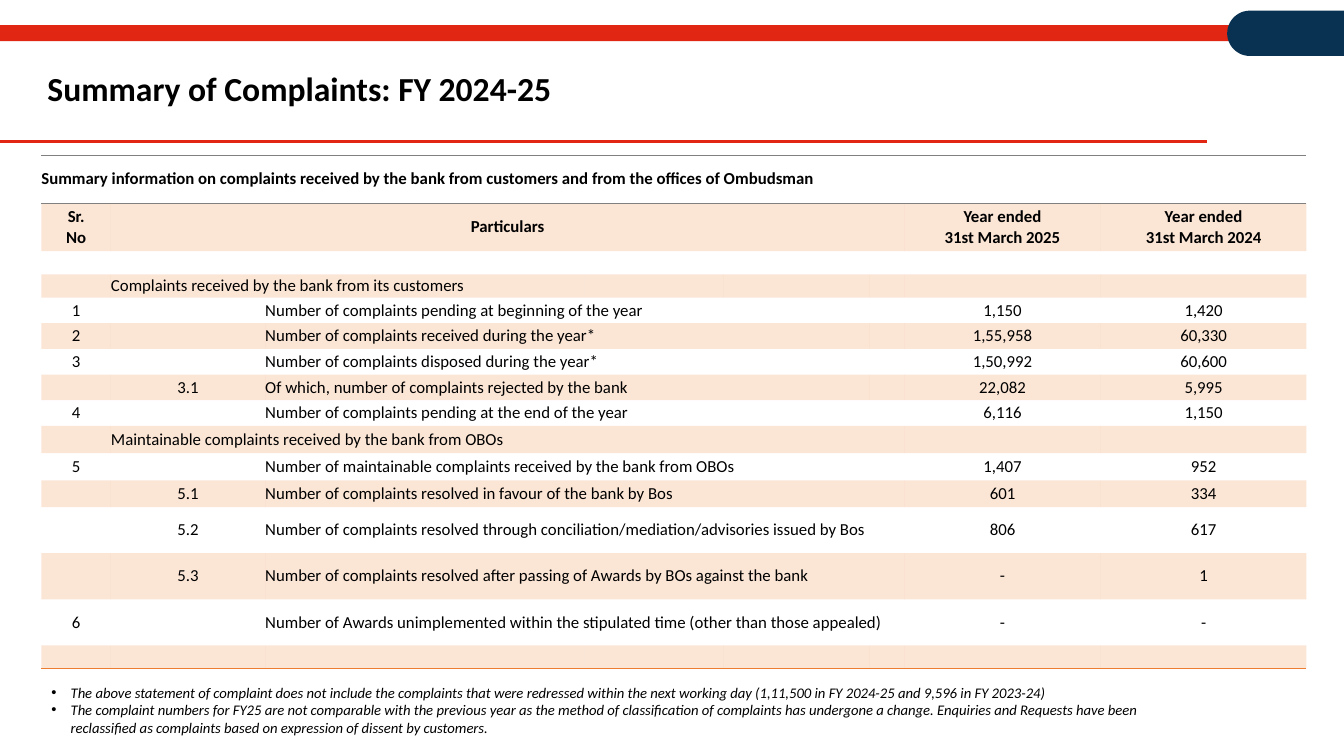
"""Build the complaints summary slide with its table and footnotes."""
from lxml import etree
from pptx import Presentation, util as u
from pptx.dml import color
from pptx.enum import shapes, text
from pptx.oxml import ns

COLOURS = {"red": "E12713", "navy": "093252", "orange": "ED7D31",
           "grey": "808080", "black": "000000"}
COLUMN_SHARES = [5.18, 11.48, 9.22, 14.55, 10.35, 10.88, 2.55, 14.63, 15.3]
LAST_COLUMN = len(COLUMN_SHARES) - 1

TITLE_ROW = (6.35, [(0, 9, "Summary information on complaints received by the bank "
                           "from customers and from the offices of Ombudsman")])
HEADER_ROW = (6.35, [(0, 1, "Sr.\nNo"), (1, 6, "Particulars"),
                     (7, 1, "Year ended\n31st March 2025"),
                     (8, 1, "Year ended\n31st March 2024")])


def section(height, label, span):
    """Return a row that holds only a section label."""
    return height, [(1, span, label)]


def entry(height, number, label, span, *values):
    """Return a numbered row with its label and two yearly values."""
    number_column = 1 if "." in number else 0
    return height, [(number_column, 1, number), (2, span, label),
                    (7, 1, values[0]), (8, 1, values[1])]


ROWS = [
    TITLE_ROW,
    HEADER_ROW,
    section(3.07, "", 2),
    section(3.07, "Complaints received by the bank from its customers", 3),
    entry(3.4, "1", "Number of complaints pending at beginning of the year", 4, "1,150", "1,420"),
    entry(3.4, "2", "Number of complaints received during the year*", 4, "1,55,958", "60,330"),
    entry(3.4, "3", "Number of complaints disposed during the year*", 4, "1,50,992", "60,600"),
    entry(3.4, "3.1", "Of which, number of complaints rejected by the bank", 4, "22,082", "5,995"),
    entry(3.4, "4", "Number of complaints pending at the end of the year", 4, "6,116", "1,150"),
    section(3.6, "Maintainable complaints received by the bank from OBOs", 6),
    entry(3.6, "5", "Number of maintainable complaints received by the bank from OBOs", 5,
          "1,407", "952"),
    entry(3.55, "5.1", "Number of complaints resolved in favour of the bank by Bos", 5,
          "601", "334"),
    entry(6.1, "5.2", "Number of complaints resolved through "
          "conciliation/mediation/advisories issued by Bos", 5, "806", "617"),
    entry(6.1, "5.3", "Number of complaints resolved after passing of Awards by BOs "
          "against the bank", 5, "-", "1"),
    entry(6.1, "6", "Number of Awards unimplemented within the stipulated time "
          "(other than those appealed)", 5, "-", "-"),
    (3.07, [(2, 2, "")]),
]
NOTES = [
    "The above statement of complaint does not include the complaints that were redressed "
    "within the next working day (1,11,500 in FY 2024-25 and 9,596 in FY 2023-24)",
    "The complaint numbers for FY25 are not comparable with the previous year as the method "
    "of classification of complaints has undergone a change. Enquiries and Requests have been "
    "reclassified as complaints based on expression of dissent by customers.",
]


def rgb(name):
    """Return a named colour as an RGB value."""
    return color.RGBColor.from_string(COLOURS[name])


def write(paragraph, words, size=12, bold=False, italic=False, align=text.PP_ALIGN.LEFT):
    """Write formatted words into a paragraph, one line per newline."""
    paragraph.alignment = align
    paragraph.space_before = u.Pt(0)
    for position, line in enumerate(words.split("\n") if words else []):
        if position:
            paragraph.add_line_break()
        run = paragraph.add_run()
        run.text = line
        font = run.font
        font.name, font.size, font.bold, font.italic = "Calibri", u.Pt(size), bold, italic
        font.color.rgb = rgb("black")
    etree.SubElement(paragraph._p, ns.qn("a:endParaRPr"), sz=str(int(size * 100)))


class ComplaintsSlide:
    """Hold the slide and place its elements by percentages of its size."""

    def __init__(self, presentation):
        self.width, self.height = presentation.slide_width, presentation.slide_height
        self.slide = presentation.slides.add_slide(presentation.slide_layouts[1])

    def across(self, share):
        """Return a percentage of the slide's width."""
        return u.Emu(round(self.width * share / 100))

    def down(self, share):
        """Return a percentage of the slide's height."""
        return u.Emu(round(self.height * share / 100))

    def box(self, left, top, width, height):
        """Return a box given in percentages."""
        return self.across(left), self.down(top), self.across(width), self.down(height)

    def place(self, shape, *shares):
        """Move a placeholder and return its text frame."""
        shape.left, shape.top, shape.width, shape.height = self.box(*shares)
        frame = shape.text_frame
        frame.word_wrap, frame.auto_size = True, text.MSO_AUTO_SIZE.NONE
        return frame

    def title(self, words, *shares):
        """Fill the title placeholder."""
        frame = self.place(self.slide.shapes.title, *shares)
        frame.vertical_anchor = text.MSO_ANCHOR.MIDDLE
        frame.paragraphs[0].line_spacing = 0.9
        write(frame.paragraphs[0], words, size=24, bold=True)

    def bullets(self, items, *shares):
        """Fill the body placeholder with bulleted notes."""
        frame = self.place(self.slide.placeholders[1], *shares)
        for position, item in enumerate(items):
            paragraph = frame.add_paragraph() if position else frame.paragraphs[0]
            write(paragraph, item, size=10.5, italic=True)
            properties = paragraph._p.get_or_add_pPr()
            indent = u.Inches(0.19)
            properties.set("marL", str(indent))
            properties.set("indent", str(-indent))
            etree.SubElement(properties, ns.qn("a:buFont"), typeface="Arial")
            etree.SubElement(properties, ns.qn("a:buChar"), char="•")

    def tab(self, colour, rotation, *shares):
        """Draw a bar turned on its side, rounded at its leading end."""
        left, top, width, height = self.box(*shares)
        shape = self.slide.shapes.add_shape(
            shapes.MSO_SHAPE.ROUND_2_SAME_RECTANGLE, left + (width - height) // 2,
            top + (height - width) // 2, height, width)
        shape.rotation = rotation
        shape.adjustments[0] = 0.5
        shape.shadow.inherit = False
        shape.fill.solid()
        shape.fill.fore_color.rgb = rgb(colour)
        shape.line.fill.background()

    def rule(self, colour, top, right):
        """Draw a horizontal line from the left edge."""
        line = self.slide.shapes.add_connector(
            shapes.MSO_CONNECTOR.STRAIGHT, 0, self.down(top), self.across(right), self.down(top))
        line.line.color.rgb = rgb(colour)
        line.line.width = u.Pt(2.25)
        etree.SubElement(line._element.spPr, ns.qn("a:effectLst"))

    def border(self, cell, side, colour):
        """Add a one-point border to the top or bottom of a cell."""
        line = etree.Element(ns.qn(f"a:ln{side}"), w=str(u.Pt(1)))
        fill = etree.SubElement(line, ns.qn("a:solidFill"))
        etree.SubElement(fill, ns.qn("a:srgbClr"), val=COLOURS[colour])
        cell._tc.get_or_add_tcPr().insert(0, line)

    def shade(self, cell, banded):
        """Give a cell a translucent band or no fill."""
        if not banded:
            cell.fill.background()
            return
        cell.fill.solid()
        cell.fill.fore_color.rgb = rgb("orange")
        tint = cell._tc.tcPr.find(".//" + ns.qn("a:srgbClr"))
        etree.SubElement(tint, ns.qn("a:alpha"), val="20000")

    def table(self, rows, left, top):
        """Draw the banded complaints table."""
        heights = [height for height, _ in rows]
        table = self.slide.shapes.add_table(
            len(rows), len(COLUMN_SHARES),
            *self.box(left, top, sum(COLUMN_SHARES), sum(heights))).table
        table.first_row = table.horz_banding = False
        style = table._tbl.tblPr.find(ns.qn("a:tableStyleId"))
        style.text = "{2D5ABB26-0587-4C30-8999-92F81FD0307C}"
        for column, share in zip(table.columns, COLUMN_SHARES):
            column.width = self.across(share)
        for row_number, (height, entries) in enumerate(rows):
            table.rows[row_number].height = self.down(height)
            words = {column: label for column, _, label in entries}
            spans = {column: span for column, span, _ in entries}
            for column in range(LAST_COLUMN + 1):
                cell = table.cell(row_number, column)
                cell.margin_left = cell.margin_right = cell.margin_top = cell.margin_bottom = 0
                cell.vertical_anchor = text.MSO_ANCHOR.MIDDLE
                is_label = spans.get(column, 1) > 1 and row_number != 1
                write(cell.text_frame.paragraphs[0], words.get(column, ""), bold=row_number < 2,
                      align=text.PP_ALIGN.LEFT if is_label else text.PP_ALIGN.CENTER)
                self.shade(cell, row_number % 2)
                if row_number in (0, len(rows) - 1):
                    self.border(cell, "B", "orange" if row_number else "grey")
                if row_number == 0:
                    self.border(cell, "T", "grey")
            for column, span in spans.items():
                if span > 1:
                    table.cell(row_number, column).merge(
                        table.cell(row_number, column + span - 1))


def main():
    """Build and save the presentation."""
    presentation = Presentation()
    presentation.slide_width, presentation.slide_height = u.Inches(13.33), u.Inches(7.5)
    page = ComplaintsSlide(presentation)
    page.tab("red", 90, 0, 3.33, 92.85, 2.13)
    page.tab("navy", 270, 91.31, 1.4, 8.69, 6)
    page.rule("red", 18.67, 89.78)
    page.title("Summary of Complaints: FY 2024-25", 2.78, 6.4, 87, 11.07)
    page.bullets(NOTES, 3.08, 89.73, 85.72, 8.4)
    page.table(ROWS, 3.08, 20.53)
    presentation.save("out.pptx")


if __name__ == "__main__":
    main()
